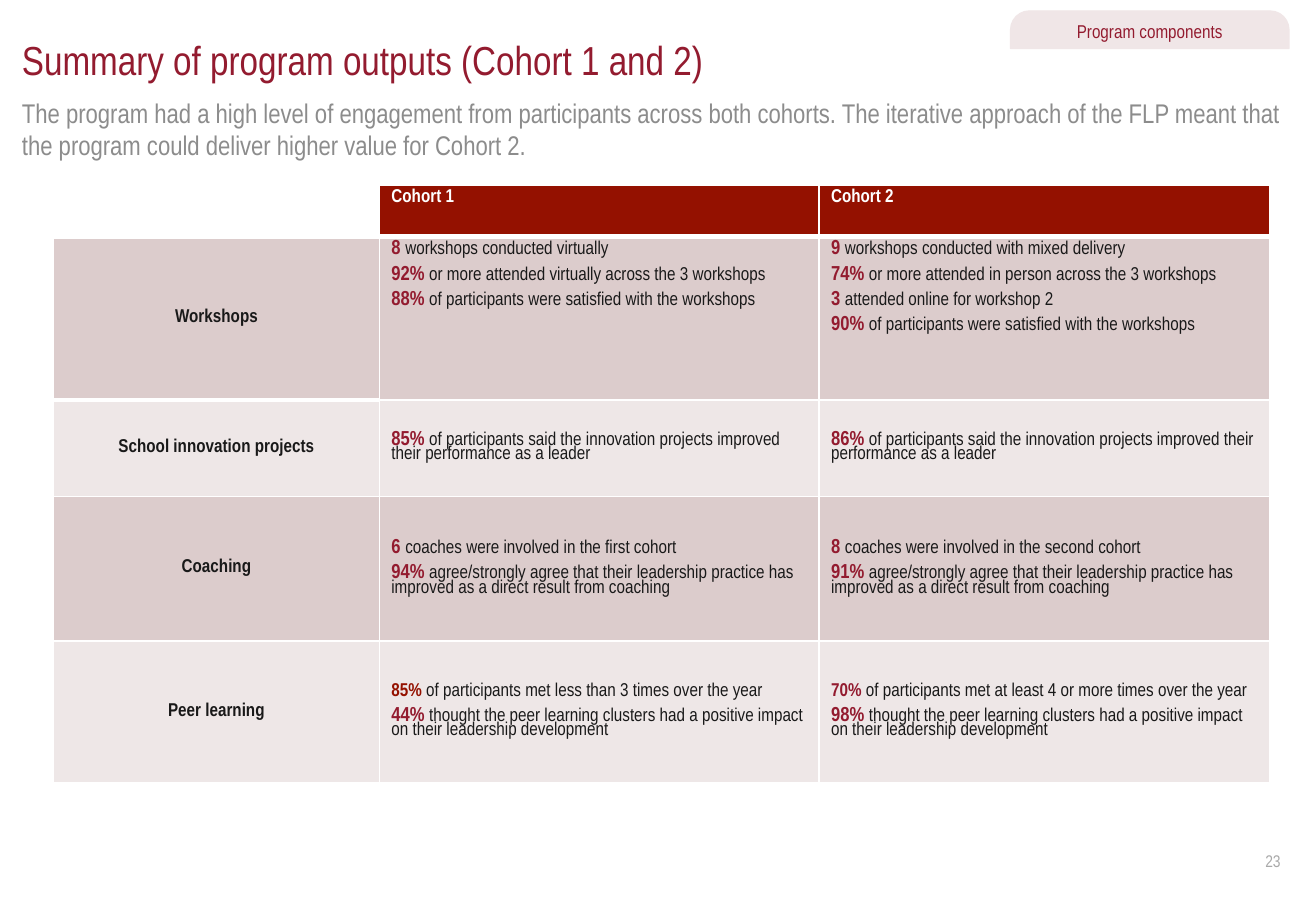
"""Builds the slide that summarises program outputs for both cohorts."""
import pptx
import pptx.dml.color
import pptx.enum.shapes
import pptx.enum.text
import pptx.oxml
import pptx.oxml.ns
import pptx.util

Pt = pptx.util.Pt
ALIGN = pptx.enum.text.PP_ALIGN
ANCHOR = pptx.enum.text.MSO_ANCHOR
CRIMSON, BRICK, INK, WHITE = "931B2F", "941100", "191919", "FFFFFF"
DARK_BAND, LIGHT_BAND, TAB_FILL = "DCCCCC", "EEE7E7", "F0E6E7"


def rgb(value):
    return pptx.dml.color.RGBColor.from_string(value)


def style(font, size, color, bold=False):
    font.name, font.size, font.bold = "Arial Narrow", Pt(size), bold
    font.color.rgb = rgb(color)


deck = pptx.Presentation()
deck.slide_width, deck.slide_height = Pt(780), Pt(540)
page = deck.slides.add_slide(deck.slide_layouts[1])

headings = [
    (page.shapes.title, 21, 28.8, 24, CRIMSON, 0, "Summary of program outputs (Cohort 1 and 2)"),
    (page.placeholders[1], 57, 38.9, 16, "8C8C8C", 6,
     "The program had a high level of engagement from participants across both cohorts. "
     "The iterative approach of the FLP meant that the program could deliver higher value for Cohort 2."),
]
for box, top, height, size, color, after, text in headings:
    box.left, box.top, box.width, box.height = Pt(13), Pt(top), Pt(754), Pt(height)
    frame = box.text_frame
    frame.text = text
    frame.word_wrap = True
    frame.auto_size = pptx.enum.text.MSO_AUTO_SIZE.NONE
    frame.vertical_anchor = ANCHOR.TOP
    frame.margin_left = frame.margin_top = frame.margin_right = frame.margin_bottom = 0
    para = frame.paragraphs[0]
    properties = para._p.get_or_add_pPr()
    properties.set("marL", "0")
    properties.set("indent", "0")
    properties.append(pptx.oxml.parse_xml(f"<a:buNone {pptx.oxml.ns.nsdecls('a')}/>"))
    para.alignment = ALIGN.LEFT
    para.space_before, para.space_after = Pt(0), Pt(after)
    style(para.font, size, color)

tab = page.shapes.add_shape(
    pptx.enum.shapes.MSO_SHAPE.ROUND_2_SAME_RECTANGLE, Pt(599), Pt(6.5), Pt(165), Pt(22.3))
tab.adjustments[0], tab.adjustments[1] = 0.5, 0
tab.shadow.inherit = False
tab.fill.solid()
tab.fill.fore_color.rgb = rgb(TAB_FILL)
tab.line.color.rgb = rgb(TAB_FILL)
tab.line.width = Pt(0.75)
tab.text_frame.text = "Program components"
tab.text_frame.vertical_anchor = ANCHOR.BOTTOM
para = tab.text_frame.paragraphs[0]
para.alignment = ALIGN.CENTER
style(para.font, 11, CRIMSON)

satisfied = "of participants were satisfied with the workshops"
improved = "of participants said the innovation projects improved their performance as a leader"
coached = "agree/strongly agree that their leadership practice has improved as a direct result from coaching"
clusters = "thought the peer learning clusters had a positive impact on their leadership development"
outputs = [
    ("Workshops",
     [("8", "workshops conducted virtually"),
      ("92%", "or more attended virtually across the 3 workshops"),
      ("88%", satisfied)],
     [("9", "workshops conducted with mixed delivery"),
      ("74%", "or more attended in person across the 3 workshops"),
      ("3", "attended online for workshop 2"),
      ("90%", satisfied)]),
    ("School innovation projects", [("85%", improved)], [("86%", improved)]),
    ("Coaching",
     [("6", "coaches were involved in the first cohort"), ("94%", coached)],
     [("8", "coaches were involved in the second cohort"), ("91%", coached)]),
    ("Peer learning",
     [("85%", "of participants met less than 3 times over the year", 11, BRICK), ("44%", clusters)],
     [("70%", "of participants met at least 4 or more times over the year", 11, CRIMSON), ("98%", clusters)]),
]

widths = [193, 260.6, 267.1]
heights = [30.4, 97, 57, 85.8, 84.2]
table = page.shapes.add_table(
    len(heights), len(widths), Pt(31.8), Pt(109.8), Pt(sum(widths)), Pt(sum(heights))).table
table.first_row = table.horz_banding = False
for column, width in zip(table.columns, widths):
    column.width = Pt(width)
for row, height in zip(table.rows, heights):
    row.height = Pt(height)

thick_edges = {(0, 0), (0, 1), (0, 2), (1, 0)}
for row in range(len(heights)):
    for column in range(len(widths)):
        cell = table.cell(row, column)
        edges = {"L": 1, "R": 1,
                 "T": 3 if (row - 1, column) in thick_edges else 1,
                 "B": 3 if (row, column) in thick_edges else 1}
        for side, weight in edges.items():
            cell._tc.get_or_add_tcPr().append(pptx.oxml.parse_xml(
                f'<a:ln{side} {pptx.oxml.ns.nsdecls("a")} w="{Pt(weight)}"><a:solidFill>'
                f'<a:srgbClr val="{WHITE}"/></a:solidFill></a:ln{side}>'))
        if (row, column) == (0, 0):
            cell.fill.background()
            continue
        cell.fill.solid()
        cell.fill.fore_color.rgb = rgb(BRICK if row == 0 else DARK_BAND if row % 2 else LIGHT_BAND)
        top_aligned = row == 0 or (row == 1 and column > 0)
        cell.vertical_anchor = ANCHOR.TOP if top_aligned else ANCHOR.MIDDLE
        frame = cell.text_frame
        if row == 0 or column == 0:
            frame.text = f"Cohort {column}" if row == 0 else outputs[row - 1][0]
            para = frame.paragraphs[0]
            para.alignment = ALIGN.LEFT if row == 0 else ALIGN.CENTER
            para.line_spacing = 0.8
            style(para.font, 11, WHITE if row == 0 else INK, True)
            continue
        facts = outputs[row - 1][column]
        for index, (figure, text, *special) in enumerate(facts):
            para = frame.add_paragraph() if index else frame.paragraphs[0]
            para.line_spacing = 0.8
            para.space_after = Pt(6 if len(facts) > 1 else 0)
            size, color = special or (12, CRIMSON)
            span = para.add_run()
            span.text = figure + " "
            style(span.font, size, color, True)
            span = para.add_run()
            span.text = text
            style(span.font, 11, INK)

number = page.shapes.add_textbox(Pt(739.5), Pt(496), Pt(26.6), Pt(28.8))
number.text_frame.word_wrap = True
number.text_frame.vertical_anchor = ANCHOR.MIDDLE
number.text_frame.text = "23"
para = number.text_frame.paragraphs[0]
para.alignment = ALIGN.RIGHT
style(para.font, 10, "A9A9A9")

deck.save("out.pptx")
